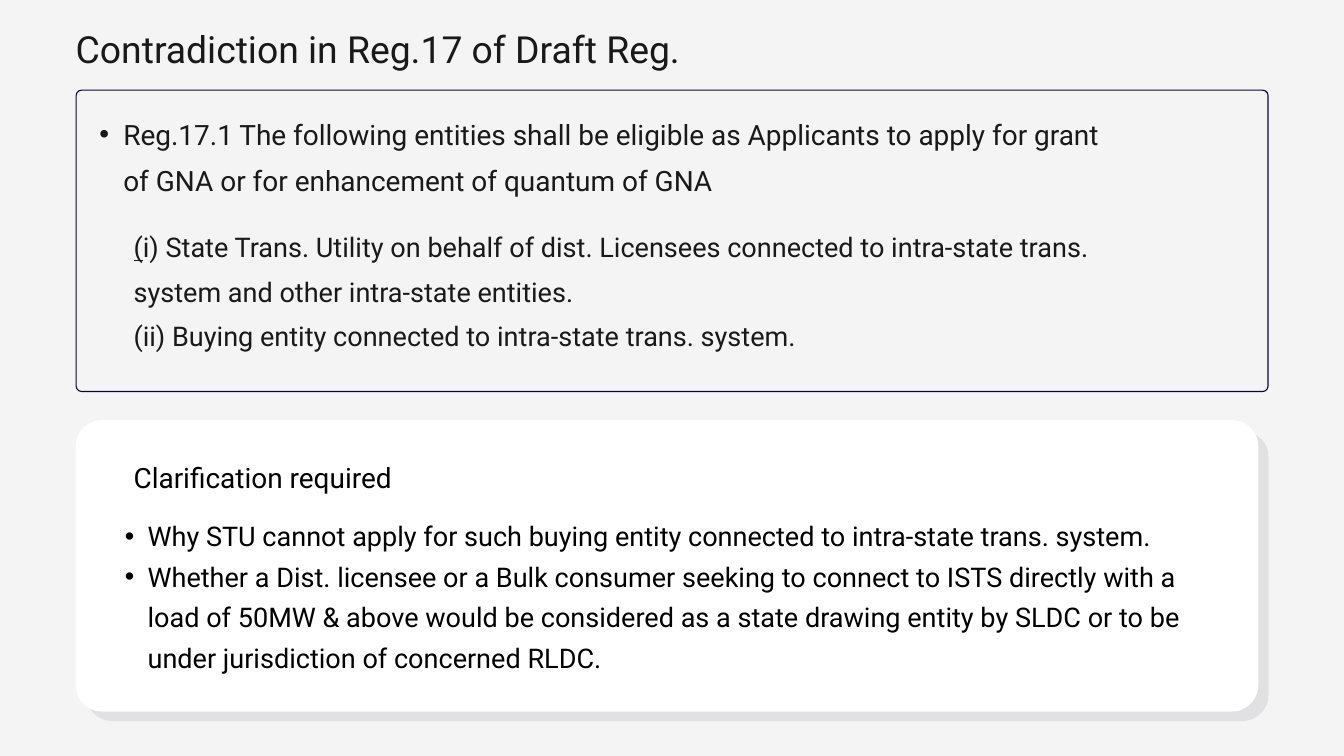
"""Build a slide on the contradiction in Reg.17 and the clarification it needs."""
from dataclasses import dataclass

from lxml import etree
from pptx import Presentation
from pptx.dml.color import RGBColor
from pptx.enum.shapes import MSO_SHAPE
from pptx.enum.text import MSO_ANCHOR, MSO_AUTO_SIZE, PP_ALIGN
from pptx.oxml.ns import qn
from pptx.slide import Slide
from pptx.util import Cm, Pt

ROUND = MSO_SHAPE.ROUNDED_RECTANGLE
TOP = MSO_ANCHOR.TOP
FIXED = MSO_AUTO_SIZE.NONE
LEFT = PP_ALIGN.LEFT
FONT = "Roboto"
COLORS = {"page": "F4F4F4", "navy": "050A30", "white": "FFFFFF",
          "ink": "191919", "black": "000000"}


@dataclass
class Box:
    left: float
    top: float
    width: float
    height: float


@dataclass
class Card:
    box: Box
    radius: float
    fill: str = ""
    line: str = ""
    alpha: int = 100


@dataclass
class Run:
    text: str
    under: bool = False


@dataclass
class Block:
    box: Box
    paras: list[list[Run]]
    size: float
    pitch: float
    color: str
    indent: float = 0
    holder: int | None = None


CARDS = [
    Card(Box(2.88, 3.41, 45.05, 11.39), 0.2, line="navy"),
    Card(Box(3.25, 16.29, 44.7, 10.97), 1, fill="navy", alpha=8),
    Card(Box(2.86, 15.88, 44.7, 11.02), 1, fill="white"),
]
BLOCKS = [
    Block(Box(2.86, 0.85, 39.6, 1.78),
          [[Run("Contradiction in Reg.17 of Draft Reg.")]],
          40, 52, "ink", holder=0),
    Block(Box(2.86, 3.97, 39.6, 3.33),
          [[Run("Reg.17.1 The following entities shall be eligible as Applicants "
                "to apply for grant of GNA or for enhancement of quantum of GNA")]],
          30, 49.2, "ink", indent=0.9, holder=1),
    Block(Box(5.05, 8.28, 39.6, 6.3),
          [[Run("(", under=True),
            Run("i) State Trans. Utility on behalf of dist. Licensees connected to "
                "intra-state trans. system and other intra-state entities.")],
           [Run("(ii) Buying entity connected to intra-state trans. system.")]],
          29, 47.5, "ink"),
    Block(Box(5.05, 17.2, 11.5, 1.42), [[Run("Clarification required")]],
          30, 42, "black"),
    Block(Box(3.86, 19.33, 42.19, 7.3),
          [[Run("Why STU cannot apply for such buying entity connected to "
                "intra-state trans. system.")],
           [Run("Whether a Dist. licensee or a Bulk consumer seeking to connect to "
                "ISTS directly with a load of 50MW & above would be considered as a "
                "state drawing entity by SLDC or to be under jurisdiction of "
                "concerned RLDC.")]],
          29, 43.5, "black", indent=0.86, holder=2),
]


def rgb(name: str) -> RGBColor:
    return RGBColor.from_string(COLORS[name])


def frame(box: Box) -> tuple[Cm, Cm, Cm, Cm]:
    return Cm(box.left), Cm(box.top), Cm(box.width), Cm(box.height)


def draw_card(slide: Slide, card: Card) -> None:
    shape = slide.shapes.add_shape(ROUND, *frame(card.box))
    shape.shadow.inherit = False
    shape.adjustments[0] = card.radius / card.box.height
    if card.fill:
        shape.fill.solid()
        shape.fill.fore_color.rgb = rgb(card.fill)
    else:
        shape.fill.background()
    if card.alpha < 100:
        tint = shape.element.spPr.find(".//" + qn("a:srgbClr"))
        etree.SubElement(tint, qn("a:alpha"), val=str(card.alpha * 1000))
    if card.line:
        shape.line.color.rgb = rgb(card.line)
        shape.line.width = Pt(1.2)
    else:
        shape.line.fill.background()
    slide.shapes.title.element.addprevious(shape.element)


def draw_block(slide: Slide, block: Block) -> None:
    if block.holder is None:
        shape = slide.shapes.add_textbox(*frame(block.box))
    else:
        shape = slide.placeholders[block.holder]
        shape.left, shape.top, shape.width, shape.height = frame(block.box)
    text = shape.text_frame
    text.word_wrap = True
    text.auto_size = FIXED
    text.vertical_anchor = TOP
    text.margin_left = text.margin_right = text.margin_top = text.margin_bottom = 0
    for place, runs in enumerate(block.paras):
        para = text.add_paragraph() if place else text.paragraphs[0]
        para.alignment = LEFT
        para.line_spacing = Pt(block.pitch)
        para.space_before = para.space_after = Pt(0)
        if block.indent:
            props = para._p.get_or_add_pPr()
            props.set("marL", str(Cm(2 * block.indent)))
            props.set("indent", str(-Cm(block.indent)))
            etree.SubElement(props, qn("a:buChar"), char="•")
        for part in runs:
            run = para.add_run()
            run.text = part.text
            run.font.name = FONT
            run.font.size = Pt(block.size)
            run.font.color.rgb = rgb(block.color)
            run.font.underline = part.under


def main() -> None:
    deck = Presentation()
    deck.slide_width, deck.slide_height = Cm(50.8), Cm(28.58)
    slide = deck.slides.add_slide(deck.slide_layouts.get_by_name("Two Content"))
    slide.background.fill.solid()
    slide.background.fill.fore_color.rgb = rgb("page")
    for card in CARDS:
        draw_card(slide, card)
    for block in BLOCKS:
        draw_block(slide, block)
    deck.save("out.pptx")


if __name__ == "__main__":
    main()
